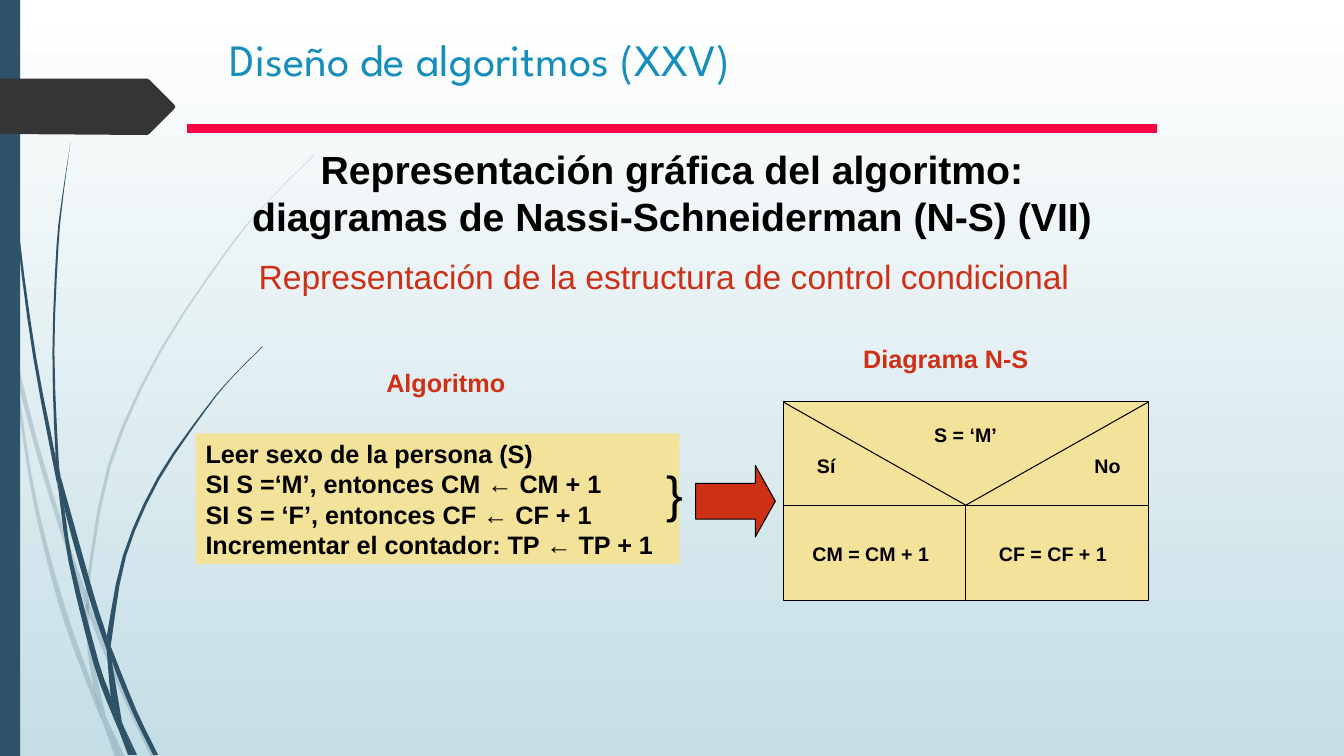
"""Build the slide on the Nassi-Schneiderman diagram of a conditional structure."""
from lxml import etree
from pptx import Presentation
from pptx.dml.color import RGBColor
from pptx.enum.shapes import MSO_CONNECTOR as Line, MSO_SHAPE as Preset
from pptx.enum.text import MSO_ANCHOR as Anchor, PP_ALIGN as Align
from pptx.oxml.ns import qn
from pptx.util import Cm, Pt

TEAL, SAND, RED, PINK = "2E5369", "F3E299", "CE3016", "F70544"
BLACK, CHARCOAL, TITLE_BLUE = "000000", "353535", "178DBB"
SKY = ["FFFFFF", "C5DEE5"]

TITLE = "Diseño de algoritmos (XXV)"
HEADING = ("Representación gráfica del algoritmo:\v"
           "diagramas de Nassi-Schneiderman (N-S) (VII)")
ALGORITHM = ["Leer sexo de la persona (S)",
             "SI S =‘M’, entonces CM ← CM + 1",
             "SI S = ‘F’, entonces CF ← CF + 1",
             "Incrementar el contador: TP ← TP + 1"]

# Each label: text, left, top, width, height, size, colour, bold, alignment.
LABELS = [
    ("Representación de la estructura de control condicional",
     4.73, 6.32, 24, 1.27, 24, RED, False, Align.CENTER),
    ("S = ‘M’", 22.53, 10.52, 3.61, 0.84, 14, BLACK, True, Align.CENTER),
    ("Sí", 20.34, 11.31, 1.19, 0.84, 14, BLACK, True, Align.LEFT),
    ("No", 27.33, 11.31, 1.19, 0.84, 14, BLACK, True, Align.LEFT),
    ("CM = CM + 1", 20.14, 13.53, 3.61, 0.84, 14, BLACK, True, Align.CENTER),
    ("CF = CF + 1", 24.73, 13.53, 3.61, 0.84, 14, BLACK, True, Align.CENTER),
    ("}", 16.54, 11.53, 0.99, 1.78, 36, BLACK, False, Align.LEFT),
    ("Algoritmo", 6.74, 9.12, 8.99, 1.02, 18, RED, True, Align.CENTER),
    ("Diagrama N-S", 19.34, 8.53, 8.99, 1.02, 18, RED, True, Align.CENTER),
]

# Left and right edge of each blade of grass, downwards, in hundredths of an inch.
PALE_BLADES = [
    ([(0, 282), (0, 299), (10, 344), (11, 350)], [(0, 282), (9, 322), (11, 350)]),
    ([(14, 345), (17, 376), (36, 449), (58, 522), (84, 599)],
     [(14, 345), (36, 433), (62, 520), (85, 586)]),
    ([(88, 596), (88, 610), (123, 694), (150, 751)],
     [(88, 596), (92, 607), (127, 692), (155, 751)]),
    ([(105, 711), (119, 751)], [(105, 711), (124, 751)]),
    ([(11, 350), (28, 470), (44, 546), (65, 621), (92, 693), (101, 714)],
     [(11, 350), (17, 376), (31, 469), (48, 545), (70, 619), (93, 683), (101, 714)]),
    ([(84, 599), (87, 646), (93, 683), (96, 692), (105, 711)],
     [(84, 599), (88, 608), (91, 646), (105, 711)]),
    ([(312, 153), (268, 197), (228, 244), (158, 348), (107, 461), (85, 584), (85, 586)],
     [(312, 154), (268, 198), (229, 245), (160, 349), (110, 462), (88, 584), (88, 596)]),
    ([(101, 714), (114, 751)], [(101, 714), (119, 751)]),
    ([(85, 586), (84, 599), (88, 608)], [(85, 586), (88, 596), (88, 610)]),
    ([(93, 683), (99, 707), (101, 714), (119, 751)],
     [(93, 683), (96, 692), (105, 711), (119, 751)]),
]
DARK_BLADES = [
    ([(3, 0), (7, 110), (17, 233), (33, 355), (56, 477), (57, 481)],
     [(4, 0), (8, 109), (19, 232), (36, 355), (55, 453), (57, 481)]),
    ([(60, 472), (64, 505), (88, 592), (106, 645)],
     [(60, 472), (93, 590), (106, 631), (106, 645)]),
    ([(110, 641), (111, 656), (132, 708), (152, 749)],
     [(110, 641), (113, 649), (136, 706), (157, 749)]),
    ([(57, 477), (68, 557), (93, 659), (111, 708), (117, 722)],
     [(57, 477), (64, 505), (72, 556), (98, 657), (110, 691), (117, 722)]),
    ([(70, 141), (62, 193), (56, 245), (52, 349), (55, 449), (60, 472)],
     [(70, 141), (63, 193), (58, 245), (54, 349), (58, 453), (60, 472)]),
    ([(122, 719), (133, 749)], [(122, 719), (136, 749)]),
    ([(55, 449), (55, 453), (57, 477), (64, 505)], [(55, 449), (60, 472), (64, 505)]),
    ([(260, 344), (231, 373), (204, 405), (156, 474), (122, 551), (106, 631)],
     [(261, 344), (231, 374), (205, 406), (158, 476), (125, 552), (111, 633), (110, 641)]),
    ([(117, 722), (127, 749)], [(117, 722), (131, 749)]),
    ([(106, 645), (110, 691), (116, 706), (122, 719)],
     [(106, 645), (109, 651), (111, 656), (121, 716), (122, 719)]),
    ([(106, 631), (106, 645), (111, 656)], [(106, 631), (110, 641), (111, 656)]),
    ([(110, 691), (116, 717), (117, 722), (130, 749)],
     [(110, 691), (116, 706), (122, 719), (133, 749)]),
]
TAG = [(0, 78), (146, 78), (148, 79), (173, 104), (174, 106), (173, 108),
       (148, 133), (146, 134), (0, 133)]


def colour(hex_code):
    return RGBColor.from_string(hex_code)


def paint(shape, fill, outline=None):
    shape.shadow.inherit = False
    shape.fill.solid()
    shape.fill.fore_color.rgb = colour(fill)
    if outline:
        shape.line.color.rgb = colour(outline)
        shape.line.width = Pt(0.75)
    else:
        shape.line.fill.background()
    return shape


def add_preset(preset, left, top, width, height, fill, outline=None):
    shape = slide.shapes.add_shape(preset, Cm(left), Cm(top), Cm(width), Cm(height))
    return paint(shape, fill, outline)


def add_outline(points, fill):
    corners = [(Cm(x * 0.0254), Cm(y * 0.0254)) for x, y in points]
    builder = slide.shapes.build_freeform(*corners[0])
    builder.add_line_segments(corners[1:])
    return paint(builder.convert_to_shape(), fill)


def smooth_edge(points, steps=3):
    if len(points) == 2:
        return points
    padded = [points[0], *points, points[-1]]
    curve = []
    for a, b, c, d in zip(padded, padded[1:], padded[2:], padded[3:]):
        for t in (step / steps for step in range(steps)):
            curve.append(tuple(
                q + t * (r - p) / 2 + t**2 * (2 * p - 5 * q + 4 * r - s) / 2
                + t**3 * (3 * q - p - 3 * r + s) / 2
                for p, q, r, s in zip(a, b, c, d)))
    return curve + [points[-1]]


def write(shape, lines, size, ink, bold, align, font="Arial"):
    frame = shape.text_frame
    frame.word_wrap = True
    frame.text = "\n".join(lines)
    for paragraph in frame.paragraphs:
        paragraph.alignment = align
        for run in paragraph.runs:
            run.font.name, run.font.size, run.font.bold = font, Pt(size), bold
            run.font.color.rgb = colour(ink)


def add_label(text, left, top, width, height, *style):
    label = slide.shapes.add_textbox(Cm(left), Cm(top), Cm(width), Cm(height))
    write(label, [text], *style)
    return label


def add_rule(start, end):
    rule = slide.shapes.add_connector(Line.STRAIGHT, *map(Cm, start + end))
    rule.line.color.rgb = colour(BLACK)
    rule.line.width = Pt(0.75)
    etree.SubElement(rule.element.spPr, qn("a:effectLst"))


deck = Presentation()
deck.slide_width, deck.slide_height = Cm(33.87), Cm(19.05)
slide = deck.slides.add_slide(deck.slide_layouts[5])
sky = slide.background.fill
sky.gradient()
sky.gradient_angle = 270
for stop, shade, position in zip(sky.gradient_stops, SKY, (0, 1)):
    stop.color.rgb = colour(shade)
    stop.position = position

for blades, opacity in ((PALE_BLADES, 20), (DARK_BLADES, 100)):
    for left_edge, right_edge in blades:
        blade = add_outline(smooth_edge(left_edge) + smooth_edge(right_edge)[::-1], TEAL)
        tint = next(blade.element.spPr.iter(qn("a:srgbClr")))
        etree.SubElement(tint, qn("a:alpha")).set("val", str(opacity * 1000))
add_preset(Preset.RECTANGLE, 0, 0, 0.51, 19.05, TEAL)
add_outline(TAG, CHARCOAL)

title = slide.shapes.title
title.left, title.top, title.width, title.height = map(Cm, (5.54, 0.53, 23.01, 2.59))
write(title, [TITLE], 32, TITLE_BLUE, False, Align.LEFT, "League Spartan")
title.text_frame.vertical_anchor = Anchor.TOP
title.text_frame.margin_top = Cm(0.28)
add_preset(Preset.RECTANGLE, 4.73, 3.13, 24.41, 0.2, PINK, PINK)

heading = add_label(HEADING, 4.73, 3.53, 24.41, 2.62, 28, BLACK, True, Align.CENTER)
heading_format = next(heading.element.iter(qn("a:pPr")))
heading_format.set("marL", "0")
heading_format.set("indent", str(-Cm(1.1)))

left, top, width, height = 19.74, 10.13, 9.2, 5
right, middle, split = left + width, left + width / 2, 12.73
add_preset(Preset.RECTANGLE, left, top, width, height, SAND, BLACK)
add_rule((left, split), (right, split))
for end in [(middle, top + height), (left, top), (right, top)]:
    add_rule((middle, split), end)

algorithm = add_preset(Preset.RECTANGLE, 4.93, 10.92, 12.19, 3.3, SAND)
write(algorithm, ALGORITHM, 18, BLACK, True, Align.LEFT)
for label_row in LABELS:
    add_label(*label_row)
arrow = add_preset(Preset.RIGHT_ARROW, 17.53, 11.73, 2.01, 1.8, RED, BLACK)
arrow.adjustments[0], arrow.adjustments[1] = 0.5, 0.28

deck.save("out.pptx")
